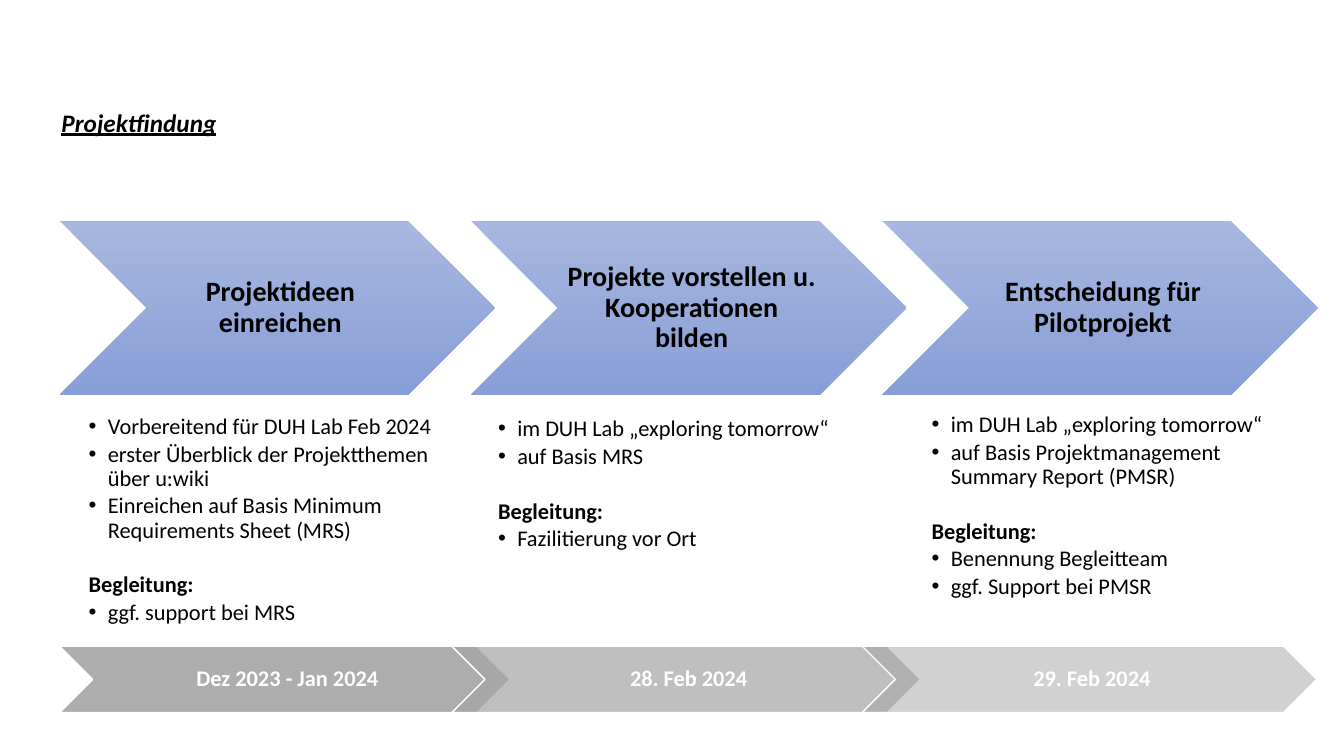
from pptx import Presentation
from pptx.dml.color import RGBColor
from pptx.enum import shapes, text
from pptx.oxml import xmlchemy as xml
from pptx.oxml.ns import qn
from pptx.util import Inches, Pt
from lxml import etree

TITLE = "Projektfindung"
HEAD = "Begleitung:"
STEPS = [
    ("Projektideen einreichen", (0.88, 4.12, 3.61),
     ["Vorbereitend für DUH Lab Feb 2024",
      "erster Überblick der Projektthemen über u:wiki",
      "Einreichen auf Basis Minimum Requirements Sheet (MRS)"],
     ["ggf. support bei MRS"]),
    ("Projekte vorstellen u. Kooperationen bilden", (4.94, 4.14, 3.45),
     ["im DUH Lab „exploring tomorrow“", "auf Basis MRS"],
     ["Fazilitierung vor Ort"]),
    ("Entscheidung für Pilotprojekt", (9.24, 4.1, 3.45),
     ["im DUH Lab „exploring tomorrow“",
      "auf Basis Projektmanagement Summary Report (PMSR)"],
     ["Benennung Begleitteam", "ggf. Support bei PMSR"]),
]
DATES = [
    ("Dez 2023 - Jan 2024", 0.59, 4.47, 90),
    ("28. Feb 2024", 4.48, 4.65, 70),
    ("29. Feb 2024", 8.55, 4.51, 50),
]
LEFT, STEP = 0.59, 4.08


def color(code):
    return RGBColor.from_string(code)


def write(para, words, size=16, ink="000000", bold=False, italic=False,
          line=False, align="LEFT", space=0.9, before=0, after=0, dot=False):
    para.alignment = getattr(text.PP_ALIGN, align)
    para.line_spacing = space
    para.space_before, para.space_after = Pt(before), Pt(after)
    if dot:
        props = para._p.get_or_add_pPr()
        props.set("marL", str(Inches(0.19)))
        props.set("indent", str(-Inches(0.19)))
        etree.SubElement(props, qn("a:buFont")).set("typeface", "Arial")
        etree.SubElement(props, qn("a:buChar")).set("char", "•")
    run = para.add_run()
    run.text = words
    font = run.font
    font.name, font.size, font.color.rgb = "Calibri", Pt(size), color(ink)
    font.bold, font.italic, font.underline = bold, italic, line


def inset(frame, left, rest):
    frame.word_wrap = True
    frame.margin_left = Inches(left)
    frame.margin_top = frame.margin_right = frame.margin_bottom = Inches(rest)


def arrow(slide, left, top, width, height, words, pad, **style):
    box = slide.shapes.add_shape(
        shapes.MSO_SHAPE.CHEVRON, *map(Inches, (left, top, width, height)))
    box.shadow.inherit = False
    frame = box.text_frame
    inset(frame, *pad)
    frame.vertical_anchor = text.MSO_ANCHOR.MIDDLE
    write(frame.paragraphs[0], words, bold=True, align="CENTER", **style)
    return box


def notes(slide, left, top, width, points, help):
    box = slide.shapes.add_textbox(*map(Inches, (left, top, width, 2.16)))
    frame = box.text_frame
    inset(frame, 0, 0)
    rows = [(p, {"dot": True}) for p in points]
    rows.append((HEAD, {"bold": True, "before": 19.6}))
    rows += [(p, {"dot": True}) for p in help]
    for i, (words, style) in enumerate(rows):
        para = frame.add_paragraph() if i else frame.paragraphs[0]
        write(para, words, after=2.4, **style)


def main():
    deck = Presentation()
    deck.slide_width, deck.slide_height = Inches(13.33), Inches(7.5)
    slide = deck.slides.add_slide(deck.slide_layouts[5])

    title = slide.shapes.title
    title.left, title.top, title.width, title.height = map(
        Inches, (0.51, 1.01, 1.83, 0.4))
    frame = title.text_frame
    frame.word_wrap = False
    frame.auto_size = text.MSO_AUTO_SIZE.SHAPE_TO_FIT_TEXT
    frame.vertical_anchor = text.MSO_ANCHOR.TOP
    write(frame.paragraphs[0], TITLE, size=18, bold=True, italic=True,
          line=True, space=1.0)

    for i, (name, place, points, help) in enumerate(STEPS):
        box = arrow(slide, LEFT + i * STEP, 2.19, 4.32, 1.73, name,
                    (0.09, 0.03), size=20)
        box.fill.gradient()
        box.fill.gradient_angle = 270
        for stop, code in zip(box.fill.gradient_stops, ("A8B7DF", "889ED7")):
            stop.color.rgb = color(code)
        box.line.fill.background()
        notes(slide, *place, points, help)

    for date, left, width, alpha in DATES:
        box = arrow(slide, left, 6.41, width, 0.66, date, (0.07, 0.02),
                    ink="FFFFFF")
        box.fill.solid()
        box.fill.fore_color.rgb = color("A5A5A5")
        tone = box._element.spPr.find(qn("a:solidFill"))[0]
        etree.SubElement(tone, qn("a:alpha")).set("val", str(alpha * 1000))
        box.line.color.rgb = color("FFFFFF")
        box.line.width = Pt(1)

    deck.save("out.pptx")


if __name__ == "__main__":
    main()
